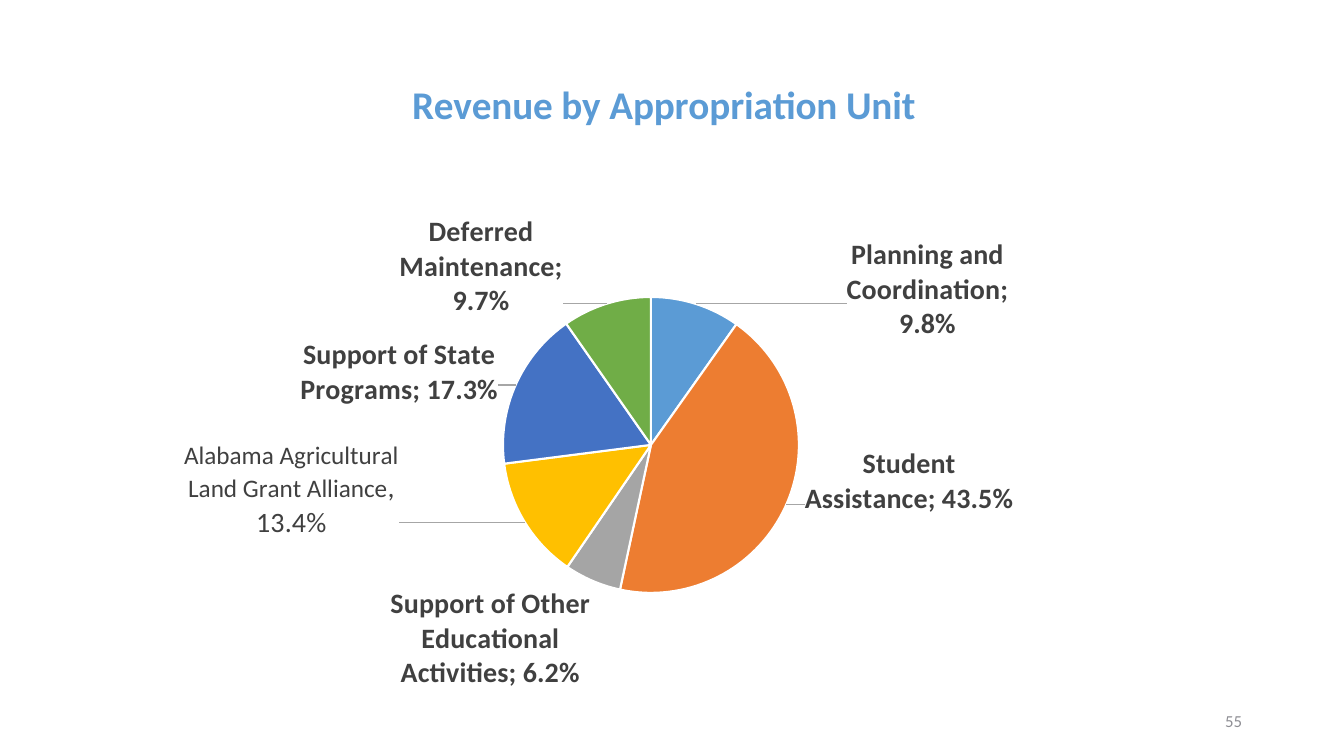
from copy import deepcopy

from pptx import Presentation
from pptx.chart.data import CategoryChartData
from pptx.dml.color import RGBColor
from pptx.enum.chart import XL_CHART_TYPE, XL_LABEL_POSITION
from pptx.enum.text import MSO_ANCHOR, PP_ALIGN
from pptx.oxml import parse_xml
from pptx.oxml.ns import qn
from pptx.util import Pt

PIE = XL_CHART_TYPE.PIE
OUTER = XL_LABEL_POSITION.OUTSIDE_END
MIDDLE = MSO_ANCHOR.MIDDLE
RIGHT = PP_ALIGN.RIGHT
PX = 914400 / 100.8
WIDE, HIGH = 1084, 666
NS = ('xmlns:c="http://schemas.openxmlformats.org/drawingml/2006/chart" '
      'xmlns:a="http://schemas.openxmlformats.org/drawingml/2006/main" '
      'xmlns:c15="http://schemas.microsoft.com/office/drawing/2012/chart"')


def style(font, size, color, bold=False):
    for key, val in {"name": "Calibri", "size": Pt(size), "bold": bold}.items():
        setattr(font, key, val)
    font.color.rgb = RGBColor.from_string(color)


def layout(marks, **spots):
    for key, val in spots.items():
        ratio = val / (WIDE if key in "xw" else HIGH)
        marks += f'<c:{key} val="{ratio:.4f}"/>'
    return parse_xml(f'<c:layout {NS}><c:manualLayout>{marks}</c:manualLayout></c:layout>')


EDGE = '<c:xMode val="edge"/><c:yMode val="edge"/>'

prs = Presentation()
prs.slide_width, prs.slide_height = round(1344 * PX), round(756 * PX)
slide = prs.slides.add_slide(prs.slide_layouts[6])

units = [
    ("Planning and Coordination", 0.098, "5B9BD5", (149, 43)),
    ("Student Assistance", 0.435, "ED7D31", (13, -60)),
    ("Support of Other Educational Activities", 0.062, "A5A5A5", None),
    ("Alabama Agricultural Land Grant Alliance", 0.134, "FFC000", (-121, -85)),
    ("Support of State Programs", 0.173, "4472C4", (-12, 24)),
    ("Deferred Maintenance", 0.097, "70AD47", (-42, 20)),
]
data = CategoryChartData(number_format="0.0%")
data.categories = [unit[0] for unit in units]
data.add_series("Series 1", [unit[1] for unit in units])
box = [round(n * PX) for n in (115, 41, WIDE, HIGH)]
chart = slide.shapes.add_chart(PIE, *box, data).chart
chart.has_legend = False
style(chart.font, 10, "000000")

chart.has_title = True
title = chart.chart_title
run = title.text_frame.paragraphs[0].add_run()
run.text = "Revenue by Appropriation Unit"
style(run.font, 28, "5B9BD5", True)

root = chart.element
head = root.find(".//" + qn("c:title"))
area = root.find(".//" + qn("c:plotArea"))
for node, place, spot in (
    (head, 1, layout(EDGE, x=290, y=30)),
    (area, 0, layout('<c:layoutTarget val="inner"/>' + EDGE, x=388, y=256, w=296, h=296)),
):
    for old in node.findall(qn("c:layout")):
        node.remove(old)
    node.insert(place, spot)

plot = chart.plots[0]
plot.vary_by_categories = True
series = plot.series[0]
labels = series.data_labels
for key, val in {
    "show_value": True,
    "show_category_name": True,
    "show_percentage": False,
    "show_legend_key": False,
    "number_format": "0.0%",
    "number_format_is_linked": False,
    "position": OUTER,
}.items():
    setattr(labels, key, val)
style(labels.font, 20, "404040", True)

group = root.find(".//" + qn("c:ser")).find(qn("c:dLbls"))
for name in ("c:separator", "c:showLeaderLines", "c:leaderLines"):
    for old in group.findall(qn(name)):
        group.remove(old)
group.append(parse_xml(f"<c:separator {NS}>; </c:separator>"))
shared = list(group)
group.append(parse_xml(f'<c:showLeaderLines {NS} val="1"/>'))
group.append(parse_xml(
    f'<c:leaderLines {NS}><c:spPr><a:ln w="9525"><a:solidFill><a:srgbClr val="A6A6A6"/>'
    '</a:solidFill></a:ln></c:spPr></c:leaderLines>'))

words = (("Alabama Agricultural Land ", 18), ("Grant Alliance", 18), (", 13.4%", 20))
runs = "".join(
    f'<a:r><a:rPr lang="en-US" sz="{size}00" b="0"><a:solidFill><a:srgbClr val="404040"/>'
    f'</a:solidFill><a:latin typeface="Calibri"/></a:rPr><a:t>{text}</a:t></a:r>'
    for text, size in words)

count = 0
for index, (name, val, color, shift) in enumerate(units):
    form = series.points[index].format
    form.fill.solid()
    form.fill.fore_color.rgb = RGBColor.from_string(color)
    form.line.color.rgb = RGBColor.from_string("FFFFFF")
    form.line.width = Pt(1.5)
    if not shift:
        continue
    label = parse_xml(f'<c:dLbl {NS}><c:idx val="{index}"/></c:dLbl>')
    label.append(layout("", x=shift[0], y=shift[1]))
    if name.startswith("Alabama"):
        label.append(parse_xml(
            f'<c:tx {NS}><c:rich><a:bodyPr/><a:p>{runs}</a:p></c:rich></c:tx>'))
    for node in shared:
        label.append(deepcopy(node))
    if name.startswith("Alabama"):
        extra = parse_xml(
            f'<c:extLst {NS}><c:ext uri="{{CE6537A1-D6FC-4f65-9D91-7224C49458BB}}">'
            '<c15:layout/></c:ext></c:extLst>')
        extra[0][0].append(layout("", w=176, h=130)[0])
        label.append(extra)
    group.insert(count, label)
    count += 1

box = [round(n * PX) for n in (950, 701, 302, 40)]
frame = slide.shapes.add_textbox(*box).text_frame
frame.word_wrap = True
frame.vertical_anchor = MIDDLE
para = frame.paragraphs[0]
para.alignment = RIGHT
run = para.add_run()
run.text = "55"
style(run.font, 12, "8E8E94")

prs.save("out.pptx")
